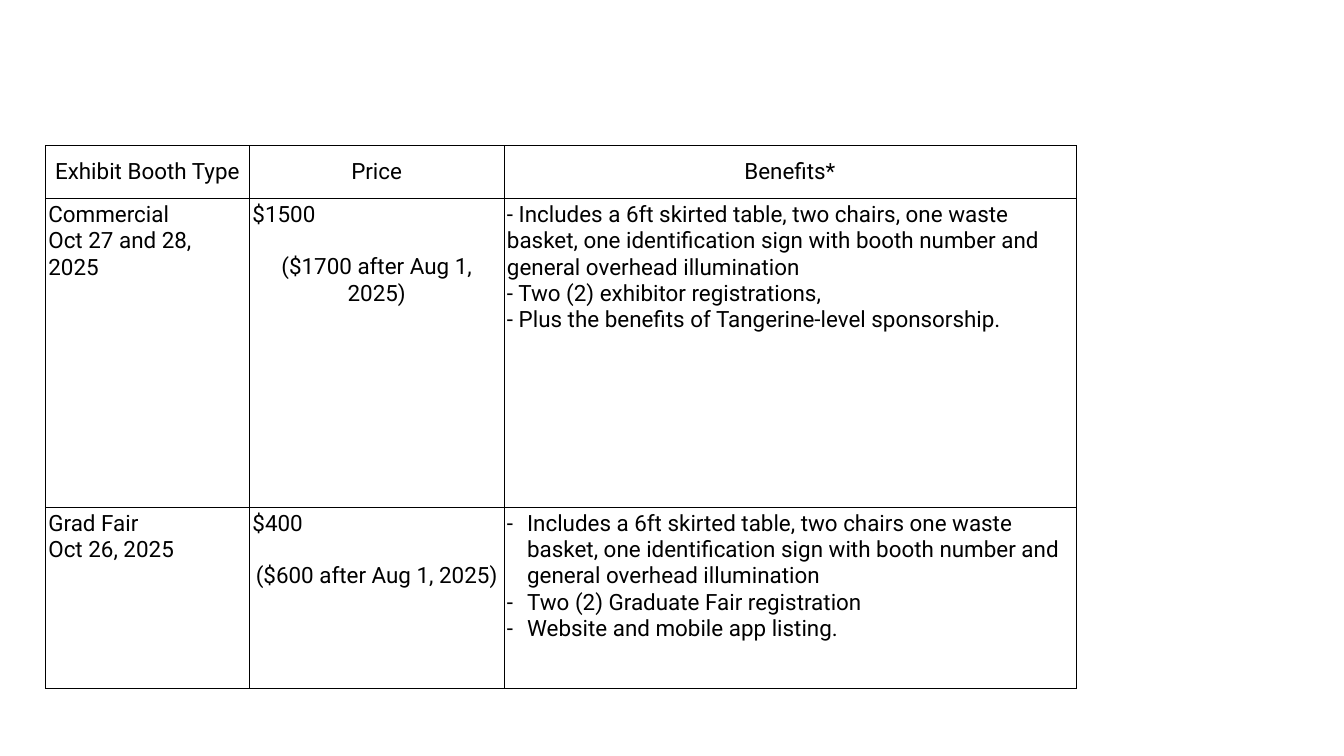
from lxml import etree
from pptx import Presentation
from pptx.dml.color import RGBColor
from pptx.enum import text
from pptx.oxml.ns import qn
from pptx.util import Inches, Pt

BLACK = RGBColor(0, 0, 0)
WHITE = RGBColor(255, 255, 255)
FONT = "Roboto"
SIZE = Pt(32)
LINE_GAP = Pt(37.5)
MARGIN = Inches(0.06)
INDENT = Inches(0.4)

COLUMNS = [4.05, 5.05, 11.35]
ROWS = [1.05, 6.13, 3.59]
HEADERS = ["Exhibit Booth Type", "Price", "Benefits*"]
BOOTHS = [
    (["Commercial", "Oct 27 and 28, 2025"],
     ["$1500", "($1700 after Aug 1, 2025)"],
     ["- Includes a 6ft skirted table, two chairs, one waste basket, one "
      "identification sign with booth number and general overhead illumination",
      "- Two (2) exhibitor registrations,",
      "- Plus the benefits of Tangerine-level sponsorship."]),
    (["Grad Fair", "Oct 26, 2025"],
     ["$400", "($600 after Aug 1, 2025)"],
     ["Includes a 6ft skirted table, two chairs one waste basket, one "
      "identification sign with booth number and general overhead illumination",
      "Two (2) Graduate Fair registration",
      "Website and mobile app listing."]),
]


def add_borders(cell):
    tc_pr = cell._tc.get_or_add_tcPr()
    for i, side in enumerate(("lnL", "lnR", "lnT", "lnB")):
        ln = etree.Element(qn(f"a:{side}"), w=str(Pt(1)))
        fill = etree.SubElement(ln, qn("a:solidFill"))
        etree.SubElement(fill, qn("a:srgbClr"), val=str(BLACK))
        tc_pr.insert(i, ln)


def add_dash_bullet(p):
    p_pr = p._p.get_or_add_pPr()
    p_pr.set("marL", str(INDENT))
    p_pr.set("indent", str(-INDENT))
    etree.SubElement(p_pr, qn("a:buFont"), typeface=FONT)
    etree.SubElement(p_pr, qn("a:buChar"), char="-")


def fill_cell(cell, lines):
    """Write one paragraph per line and return the paragraphs."""
    cell.margin_left = cell.margin_right = MARGIN
    cell.margin_top = cell.margin_bottom = MARGIN
    cell.fill.solid()
    cell.fill.fore_color.rgb = WHITE
    add_borders(cell)
    tf = cell.text_frame
    tf.text = "\n".join(lines)
    for p in tf.paragraphs:
        font = p.runs[0].font
        font.name, font.size, font.bold = FONT, SIZE, False
        font.color.rgb = BLACK
    return tf.paragraphs


def add_booth_table(slide, left, top):
    table = slide.shapes.add_table(
        len(ROWS), len(COLUMNS), left, top,
        Inches(sum(COLUMNS)), Inches(sum(ROWS))).table
    table.first_row = table.horz_banding = False
    for column, width in zip(table.columns, COLUMNS):
        column.width = Inches(width)
    for row, height in zip(table.rows, ROWS):
        row.height = Inches(height)

    for c, header in enumerate(HEADERS):
        cell = table.cell(0, c)
        fill_cell(cell, [header])[0].alignment = text.PP_ALIGN.CENTER
        cell.vertical_anchor = text.MSO_ANCHOR.MIDDLE

    for r, (booth, prices, benefits) in enumerate(BOOTHS, start=1):
        fill_cell(table.cell(r, 0), booth)
        late_price = fill_cell(table.cell(r, 1), prices)[1]
        late_price.alignment = text.PP_ALIGN.CENTER
        late_price.space_before = LINE_GAP
        for p in fill_cell(table.cell(r, 2), benefits):
            if not benefits[0].startswith("-"):
                add_dash_bullet(p)


def main():
    prs = Presentation()
    prs.slide_width, prs.slide_height = Inches(26.67), Inches(15)
    slide = prs.slides.add_slide(prs.slide_layouts[6])
    add_booth_table(slide, Inches(0.9), Inches(2.89))
    prs.save("out.pptx")


if __name__ == "__main__":
    main()
